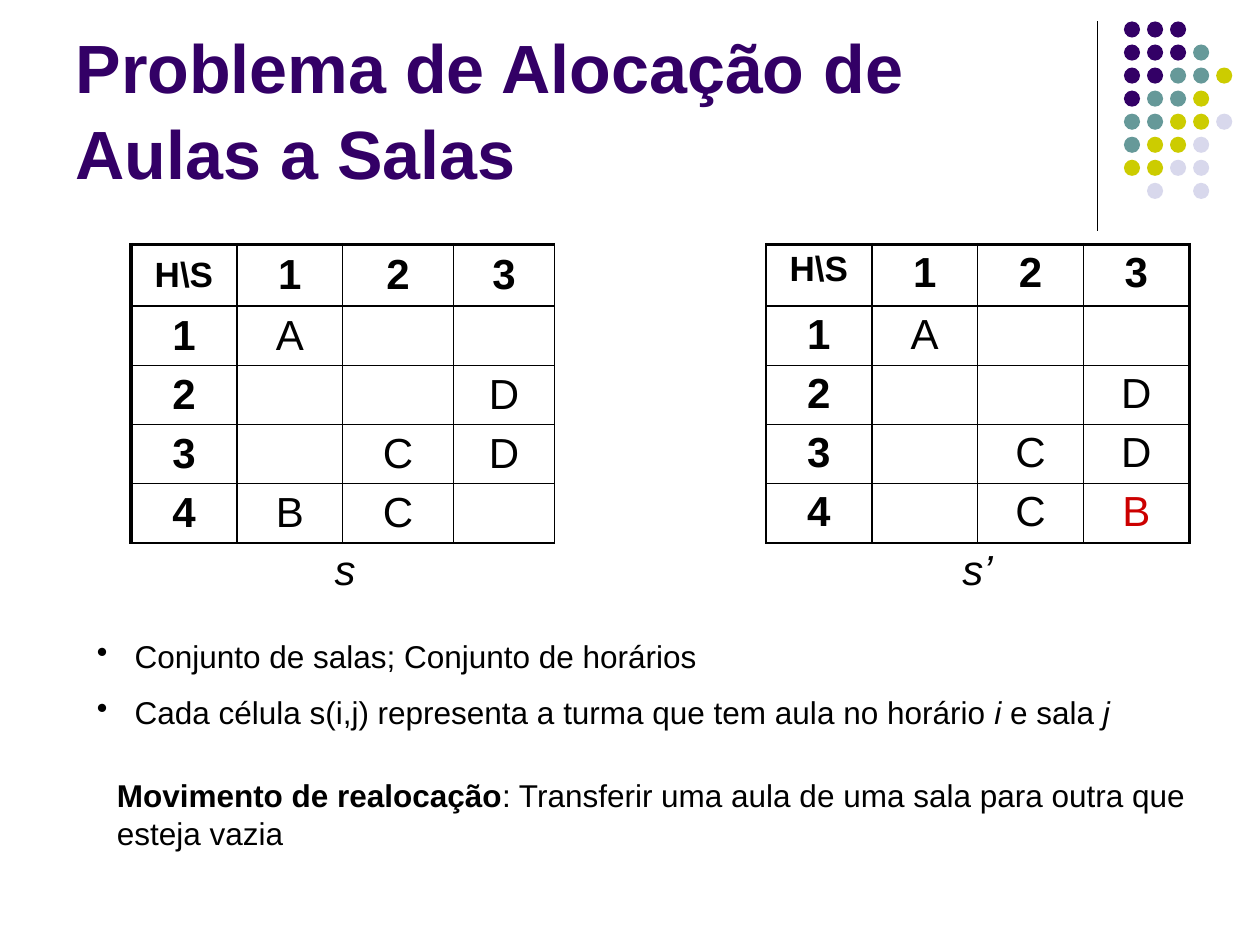
from lxml.etree import SubElement
from pptx import Presentation
from pptx.dml.color import RGBColor
from pptx.enum.shapes import MSO_CONNECTOR, MSO_SHAPE
from pptx.enum.text import MSO_ANCHOR, PP_ALIGN
from pptx.oxml.ns import qn
from pptx.util import Inches, Pt

COLORS = {"ink": "000000", "purple": "330066", "teal": "669999",
          "lime": "CCCC00", "lilac": "D8D8EC", "red": "CC0000"}
DOT_COLORS = {"P": "purple", "T": "teal", "L": "lime", "W": "lilac"}
DOT_ROWS = ["PPP", "PPPT", "PPTTL", "PTTL", "TTLLW", "TLLW", "LLWW", " W W"]

# Rows are times, columns are rooms; the two schedules sit side by side
SCHEDULE_ROWS = [
    ["H\\S", "1", "2", "3", "", "", "H\\S", "1", "2", "3"],
    ["1", "A", "", "", "", "", "1", "A", "", ""],
    ["2", "", "", "D", "", "", "2", "", "", "D"],
    ["3", "", "C", "D", "", "", "3", "", "C", "D"],
    ["4", "B", "C", "", "", "", "4", "", "C", "B"],
    ["", "s", "", "", "", "", "", "s’", "", ""],
    [""] * 10,
]
GRID_ROWS = 5
GAP_COLUMNS = (4, 5)
LABEL_COLUMNS = (0, 6)
LAST_COLUMN = 9
MOVED_CLASS = (4, 9)


class SlideBuilder:
    """Places styled elements on a grid of 100 columns by 75 rows."""

    font_name = "Arial"

    def __init__(self, presentation):
        self.column = presentation.slide_width / 100
        self.row = presentation.slide_height / 75
        self.slide = presentation.slides.add_slide(presentation.slide_layouts[5])

    def box(self, left, top, width, height):
        return (round(left * self.column), round(top * self.row),
                round(width * self.column), round(height * self.row))

    def color(self, name):
        return RGBColor.from_string(COLORS[name])

    def format_run(self, run, size, color="ink", bold=False, italic=False):
        font = run.font
        font.name, font.size = self.font_name, Pt(size)
        font.bold, font.italic = bold, italic
        font.color.rgb = self.color(color)

    def title(self, text, *place):
        shape = self.slide.shapes.title
        shape.left, shape.top, shape.width, shape.height = self.box(*place)
        frame = shape.text_frame
        frame.text = text
        frame.word_wrap = True
        frame.vertical_anchor = MSO_ANCHOR.BOTTOM
        frame.margin_bottom = Inches(0.02)
        paragraph = frame.paragraphs[0]
        paragraph.alignment = PP_ALIGN.LEFT
        paragraph.line_spacing = 1.05
        self.format_run(paragraph.runs[0], 39, "purple", bold=True)

    def line(self, left, top, right, bottom):
        start_x, start_y, end_x, end_y = self.box(left, top, right, bottom)
        line = self.slide.shapes.add_connector(
            MSO_CONNECTOR.STRAIGHT, start_x, start_y, end_x, end_y)
        line.line.color.rgb = self.color("ink")
        line.line.width = Pt(0.75)
        SubElement(line._element.spPr, qn("a:effectLst"))

    def dot(self, left, top, size, color):
        dot = self.slide.shapes.add_shape(
            MSO_SHAPE.OVAL, *self.box(left, top, size, size))
        dot.shadow.inherit = False
        dot.fill.solid()
        dot.fill.fore_color.rgb = self.color(color)
        dot.line.fill.background()

    def text(self, paragraphs, *place, bullets=False):
        """Each paragraph is a list of (text, format) pairs."""
        frame = self.slide.shapes.add_textbox(*self.box(*place)).text_frame
        frame.word_wrap = True
        for index, runs in enumerate(paragraphs):
            paragraph = frame.add_paragraph() if index else frame.paragraphs[0]
            if index:
                paragraph.space_before = Pt(10)
            for content, style in runs:
                run = paragraph.add_run()
                run.text = content
                self.format_run(run, 18, **style)
            if bullets:
                properties = paragraph._p.get_or_add_pPr()
                properties.set("marL", str(Inches(0.3)))
                properties.set("indent", str(-Inches(0.3)))
                SubElement(properties, qn("a:buChar"), char="•")

    def borders(self, cell, widths):
        properties = cell._tc.get_or_add_tcPr()
        for side, width in zip("LRTB", widths):
            edge = SubElement(properties, qn(f"a:ln{side}"), w=str(Pt(width)))
            if width:
                fill = SubElement(edge, qn("a:solidFill"))
                SubElement(fill, qn("a:srgbClr"), val=COLORS["ink"])
            else:
                SubElement(edge, qn("a:noFill"))

    def schedule_cell(self, cell, row, column, text):
        in_grid = row < GRID_ROWS and column not in GAP_COLUMNS
        if in_grid:
            widths = (2.25 if column == 0 else 1,
                      2.25 if column == LAST_COLUMN else 1,
                      2.25 if row == 0 else 1, 1)
        else:
            beside_grid = row < GRID_ROWS
            widths = (int(beside_grid and column == GAP_COLUMNS[0]),
                      int(beside_grid and column == GAP_COLUMNS[1]),
                      int(row == GRID_ROWS and column not in GAP_COLUMNS), 0)
        self.borders(cell, widths)
        cell.fill.background()
        cell.margin_top = cell.margin_bottom = Inches(0.04)
        if column < GAP_COLUMNS[0] and in_grid:
            cell.vertical_anchor = MSO_ANCHOR.MIDDLE
        if text:
            cell.text_frame.text = text
            paragraph = cell.text_frame.paragraphs[0]
            paragraph.alignment = PP_ALIGN.CENTER
            self.format_run(
                paragraph.runs[0], 20 if text == "H\\S" else 24,
                color="red" if (row, column) == MOVED_CLASS else "ink",
                bold=in_grid and (row == 0 or column in LABEL_COLUMNS),
                italic=row == GRID_ROWS)

    def schedules(self, rows, column_widths, row_heights, *place):
        table = self.slide.shapes.add_table(
            len(rows), len(rows[0]), *self.box(*place)).table
        table.first_row = table.horz_banding = False
        for column, width in zip(table.columns, column_widths):
            column.width = round(width * self.column)
        for row, height in zip(table.rows, row_heights):
            row.height = round(height * self.row)
        for row, texts in enumerate(rows):
            for column, text in enumerate(texts):
                self.schedule_cell(table.cell(row, column), row, column, text)
        for first in LABEL_COLUMNS:
            table.cell(5, first + 1).merge(table.cell(5, first + 2))
            table.cell(6, first).merge(table.cell(6, first + 3))


def main():
    presentation = Presentation()
    presentation.slide_width, presentation.slide_height = Inches(10), Inches(7.5)
    builder = SlideBuilder(presentation)

    # Corner decoration
    builder.line(87.1, 1.7, 87.1, 18.3)
    for row, codes in enumerate(DOT_ROWS):
        for column, code in enumerate(codes):
            if code in DOT_COLORS:
                builder.dot(89.2 + 1.83 * column, 1.7 + 1.83 * row, 1.28,
                            DOT_COLORS[code])

    # Title
    builder.title("Problema de Alocação de Aulas a Salas", 5, 1.3, 82.5, 14.2)

    # Schedules before and after the move
    builder.schedules(SCHEDULE_ROWS, [8.4, 8.4, 8.8, 8] + [8.4] * 6,
                      [4.9] + [4.7] * 5 + [4.1], 10.4, 19.4, 83.8, 32.5)

    # Explanation
    plain, bold, italic = {}, {"bold": True}, {"italic": True}
    builder.text([[("Movimento de realocação", bold),
                   (": Transferir uma aula de uma sala para outra que esteja vazia",
                    plain)]], 8.3, 61.1, 89, 7)
    builder.text([[("Conjunto de salas; Conjunto de horários", plain)],
                  [("Cada célula s(i,j) representa a turma que tem aula no horário ",
                    plain), ("i", italic), (" e sala ", plain), ("j", italic)]],
                 6.7, 50.1, 89.8, 8.5, bullets=True)

    presentation.save("out.pptx")


if __name__ == "__main__":
    main()
